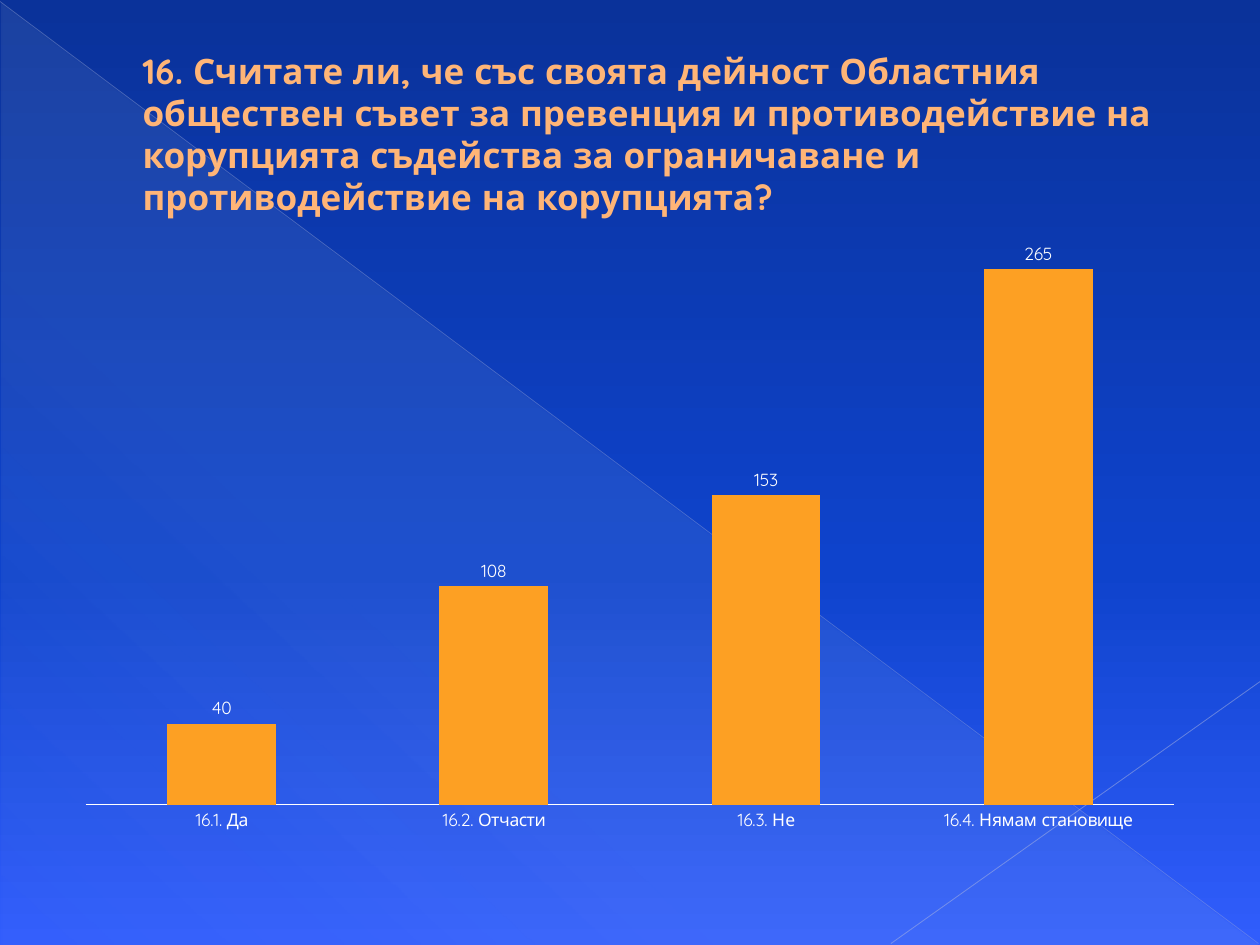
import pptx
import pptx.chart.data
import pptx.dml.color
import pptx.enum.chart
import pptx.enum.shapes
import pptx.enum.text
import pptx.oxml
import pptx.oxml.ns
import pptx.util

Cm = pptx.util.Cm
Pt = pptx.util.Pt
RGBColor = pptx.dml.color.RGBColor
qn = pptx.oxml.ns.qn
NS = pptx.oxml.ns.nsdecls("a")

FONT = "Quicksand"
WHITE = RGBColor(0xFF, 0xFF, 0xFF)
PEACH = RGBColor(0xFF, 0xB5, 0x77)
BROWN = RGBColor(0xAF, 0x6F, 0x18)
ORANGE = RGBColor(0xFD, 0xA0, 0x23)
NIGHT = RGBColor(0x0A, 0x32, 0x9A)
ROYAL = RGBColor(0x0E, 0x43, 0xCC)
AZURE = RGBColor(0x31, 0x5D, 0xFC)
MIST = RGBColor(0xCC, 0xDD, 0xEA)
LILAC = RGBColor(0xAD, 0xB6, 0xDC)
PALE = RGBColor(0xB7, 0xBE, 0xDF)

TITLE = ("16.\u00a0Считате ли, че със своята дейност Областния обществен съвет за превенция "
         "и противодействие на корупцията съдейства за ограничаване и противодействие на корупцията?")
ANSWERS = {"16.1. Да": 40, "16.2. Отчасти": 108, "16.3. Не": 153, "16.4. Нямам становище": 265}
BACKGROUND = [(0, NIGHT, 100), (60, ROYAL, 100), (100, AZURE, 100)]
TRIANGLE = [(0, MIST, 10), (70, MIST, 8), (100, MIST, 1)]
LINES = [
    ((0, 0.03, 25.37, 19.02), LILAC, 0.39, 35),
    ((25.4, 13.74, 17.96, 19.02), PALE, 0.47, 45),
]


def color_xml(color, alpha):
    return f'<a:srgbClr {NS} val="{color}"><a:alpha val="{alpha * 1000}"/></a:srgbClr>'


def set_gradient(fill, holder, stops, angle):
    fill.gradient()
    old = holder.find(qn("a:gradFill"))
    gs = "".join(f'<a:gs pos="{pos * 1000}">{color_xml(color, alpha)}</a:gs>'
                 for pos, color, alpha in stops)
    new = pptx.oxml.parse_xml(
        f'<a:gradFill {NS} rotWithShape="1"><a:gsLst>{gs}</a:gsLst>'
        f'<a:lin ang="{angle * 60000}" scaled="0"/></a:gradFill>')
    holder.replace(old, new)


def add_decor(s):
    sp = s.shapes.add_shape(pptx.enum.shapes.MSO_SHAPE.RIGHT_TRIANGLE,
                            Cm(0.03), Cm(0.05), Cm(25.35), Cm(19))
    sp.shadow.inherit = False
    sp.line.fill.background()
    set_gradient(sp.fill, sp.element.spPr, TRIANGLE, 133)
    for ends, color, width, alpha in LINES:
        line = s.shapes.add_connector(pptx.enum.shapes.MSO_CONNECTOR.STRAIGHT, *map(Cm, ends))
        line.line.width = Pt(width)
        line.line.color.rgb = color
        solid = line.line.fill._xPr.find(qn("a:solidFill"))
        solid.replace(solid[0], pptx.oxml.parse_xml(color_xml(color, alpha)))
        line.element.spPr.append(pptx.oxml.parse_xml(f"<a:effectLst {NS}/>"))


def add_title(s):
    sp = s.shapes.title
    sp.element.getparent().append(sp.element)
    sp.left, sp.top, sp.width, sp.height = Cm(1.27), Cm(0.74), Cm(22.86), Cm(3.89)
    tf = sp.text_frame
    tf.word_wrap = True
    tf.vertical_anchor = pptx.enum.text.MSO_ANCHOR.MIDDLE
    tf.auto_size = pptx.enum.text.MSO_AUTO_SIZE.TEXT_TO_FIT_SHAPE
    p = tf.paragraphs[0]
    p.alignment = pptx.enum.text.PP_ALIGN.LEFT
    pPr = p._p.get_or_add_pPr()
    pPr.set("marL", str(Cm(1.35)))
    pPr.set("indent", "0")
    r = p.add_run()
    r.text = TITLE
    r.font.name = FONT
    r.font.size = Pt(20)
    r.font.bold = True
    r.font.color.rgb = PEACH
    r.font._element.insert(0, pptx.oxml.parse_xml(
        f'<a:ln {NS} w="{Pt(0.5)}"><a:solidFill><a:srgbClr val="{BROWN}"/></a:solidFill></a:ln>'))


def add_answers_chart(s):
    data = pptx.chart.data.CategoryChartData()
    data.categories = list(ANSWERS)
    data.add_series("Series 1", list(ANSWERS.values()))
    chart = s.shapes.add_chart(pptx.enum.chart.XL_CHART_TYPE.COLUMN_CLUSTERED,
                               Cm(1.27), Cm(3.73), Cm(22.86), Cm(13.28), data).chart
    chart.has_legend = False
    chart.has_title = False
    chart.font.name = FONT
    chart.font.size = Pt(10)
    chart.font.color.rgb = WHITE

    values = chart.value_axis
    values.visible = False
    values.has_major_gridlines = False
    values.minimum_scale = 0
    values.maximum_scale = 300
    cats = chart.category_axis
    cats.major_tick_mark = pptx.enum.chart.XL_TICK_MARK.NONE
    cats.format.line.color.rgb = WHITE
    cats.format.line.width = Pt(1)

    plot = chart.plots[0]
    plot.gap_width = 150
    plot.vary_by_categories = False
    fill = plot.series[0].format.fill
    fill.solid()
    fill.fore_color.rgb = ORANGE
    plot.has_data_labels = True
    labels = plot.data_labels
    labels.show_value = True
    labels.position = pptx.enum.chart.XL_LABEL_POSITION.OUTSIDE_END


def main():
    prs = pptx.Presentation()
    prs.slide_width, prs.slide_height = Cm(25.4), Cm(19.05)
    s = prs.slides.add_slide(prs.slide_layouts[5])
    fill = s.background.fill
    set_gradient(fill, s.element.cSld.find(qn("p:bg")).find(qn("p:bgPr")), BACKGROUND, 90)
    add_decor(s)
    add_title(s)
    add_answers_chart(s)
    prs.save("out.pptx")


if __name__ == "__main__":
    main()
